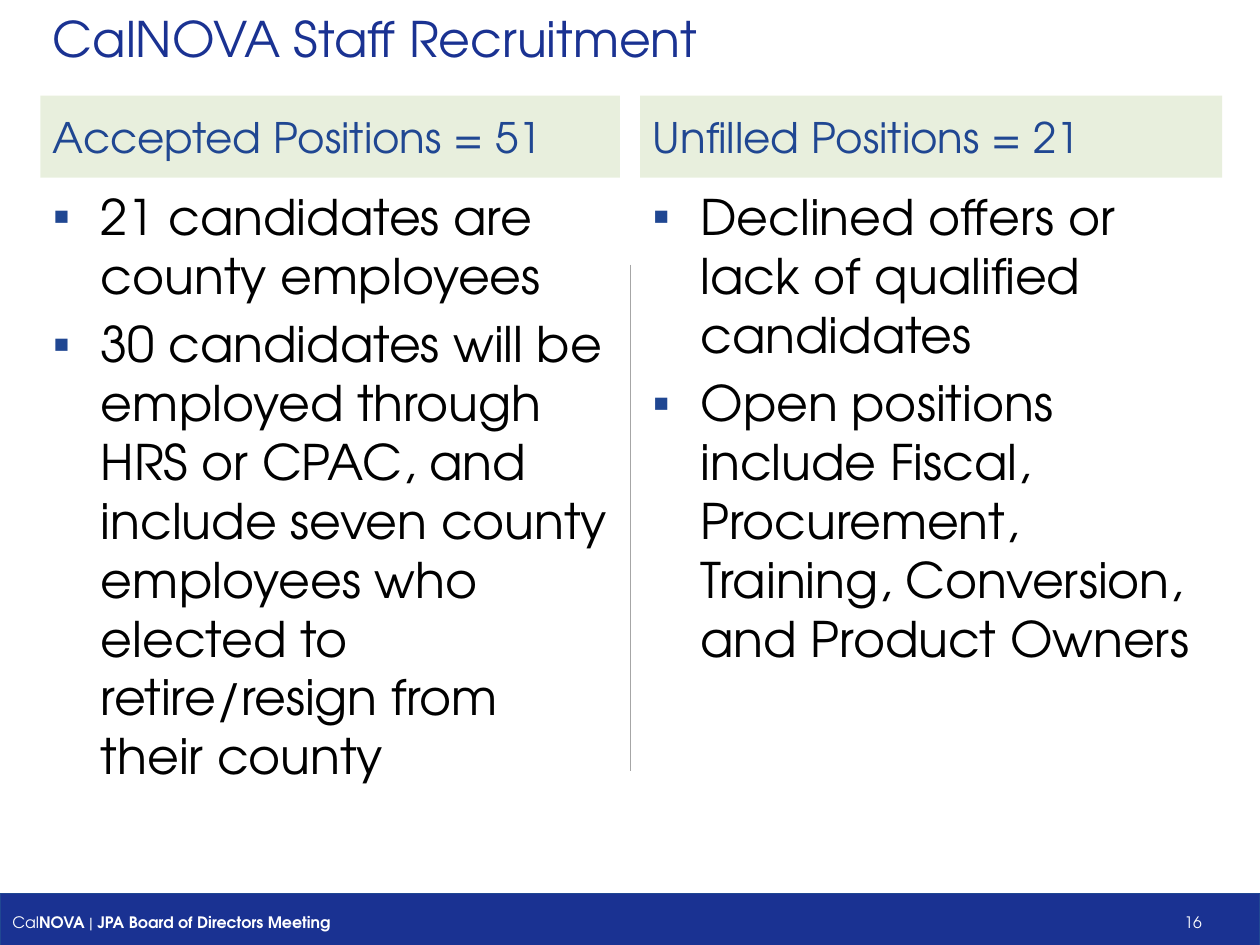
"""Build the staff recruitment slide with two compared columns."""
from lxml import etree
from pptx import Presentation, util as u
from pptx.dml.color import RGBColor
from pptx.enum import shapes, text
from pptx.oxml.ns import qn

FONT = "TeX Gyre Adventor"
COLORS = {"navy": "1A3292", "blue": "204792", "green": "88AF4B",
          "gray": "A6A6A6", "black": "000000", "white": "FFFFFF"}
TITLE = "CalNOVA Staff Recruitment"
COLUMNS = [
    {"heading": "Accepted Positions = 51", "left": 0.32, "widths": (4.6, 4.6),
     "points": ["21 candidates are county employees",
                "30 candidates will be employed through HRS or CPAC, and include "
                "seven county employees who elected to retire/resign from their county"]},
    {"heading": "Unfilled Positions = 21", "left": 5.08, "widths": (4.62, 4.58),
     "points": ["Declined offers or lack of qualified candidates",
                "Open positions include Fiscal, Procurement, Training, "
                "Conversion, and Product Owners"]},
]
FOOTER = [("Cal", False), ("NOVA", True), (" | ", False),
          ("JPA Board of Directors Meeting\t\t", True), ("16", False)]
TABS = [(4.69, "l"), (9.44, "r")]


def rgb(name):
    return RGBColor.from_string(COLORS[name])


def add_node(parent, tag, **attributes):
    values = {key: str(value) for key, value in attributes.items()}
    return etree.SubElement(parent, qn(tag), values)


def write(para, words, size=28, color="black", bold=False):
    span = para.add_run()
    span.text = words
    span.font.name, span.font.size, span.font.bold = FONT, u.Pt(size), bold
    span.font.color.rgb = rgb(color)


def place(box, left, top, width, height, anchor=text.MSO_ANCHOR.MIDDLE):
    box.left, box.top, box.width, box.height = map(u.Inches, (left, top, width, height))
    frame = box.text_frame
    frame.word_wrap, frame.auto_size = True, text.MSO_AUTO_SIZE.NONE
    frame.vertical_anchor = anchor
    return frame.paragraphs[0]


def add_bullet(para):
    props = para._p.get_or_add_pPr()
    props.set("marL", str(u.Inches(0.38)))
    props.set("indent", str(u.Inches(-0.38)))
    add_node(add_node(props, "a:buClr"), "a:srgbClr", val=COLORS["blue"])
    add_node(props, "a:buChar", char="▪")


def add_footer(page):
    bar = page.shapes.add_shape(shapes.MSO_SHAPE.RECTANGLE, 0, 0, 0, 0)
    bar.shadow.inherit = False
    bar.fill.solid()
    bar.fill.fore_color.rgb = rgb("navy")
    bar.line.color.rgb, bar.line.width = rgb("blue"), u.Pt(0.75)
    para = place(bar, 0, 7.09, 10, 0.45)
    para.alignment = text.PP_ALIGN.LEFT
    stops = add_node(para._p.get_or_add_pPr(), "a:tabLst")
    for position, side in TABS:
        add_node(stops, "a:tab", pos=u.Inches(position), algn=side)
    for words, bold in FOOTER:
        write(para, words, size=9, color="white", bold=bold)


def add_divider(page):
    ends = map(u.Inches, (5, 2.1, 5, 6.12))
    divider = page.shapes.add_connector(shapes.MSO_CONNECTOR.STRAIGHT, *ends)
    divider.line.color.rgb, divider.line.width = rgb("gray"), u.Pt(0.25)
    add_node(divider._element.spPr, "a:effectLst")


def fill_column(column, heading, body):
    left, (head_width, body_width) = column["left"], column["widths"]
    para = place(heading, left, 0.76, head_width, 0.65)
    write(para, column["heading"], size=24, color="blue")
    heading.fill.solid()
    heading.fill.fore_color.rgb = rgb("green")
    tint = heading._element.spPr.find(".//" + qn("a:srgbClr"))
    add_node(tint, "a:alpha", val=19000)

    para = place(body, left, 1.43, body_width, 5.6, text.MSO_ANCHOR.TOP)
    for index, point in enumerate(column["points"]):
        para = body.text_frame.add_paragraph() if index else para
        add_bullet(para)
        write(para, point)


def main():
    deck = Presentation()
    deck.slide_width, deck.slide_height = u.Inches(10), u.Inches(7.5)
    page = deck.slides.add_slide(deck.slide_layouts.get_by_name("Comparison"))
    title, *slots = page.placeholders
    add_footer(page)
    add_divider(page)
    para = place(title, 0.32, 0.01, 9.42, 0.59)
    para.alignment = text.PP_ALIGN.LEFT
    write(para, TITLE, color="navy")
    for column, heading, body in zip(COLUMNS, slots[::2], slots[1::2]):
        fill_column(column, heading, body)
    deck.save("out.pptx")


if __name__ == "__main__":
    main()
